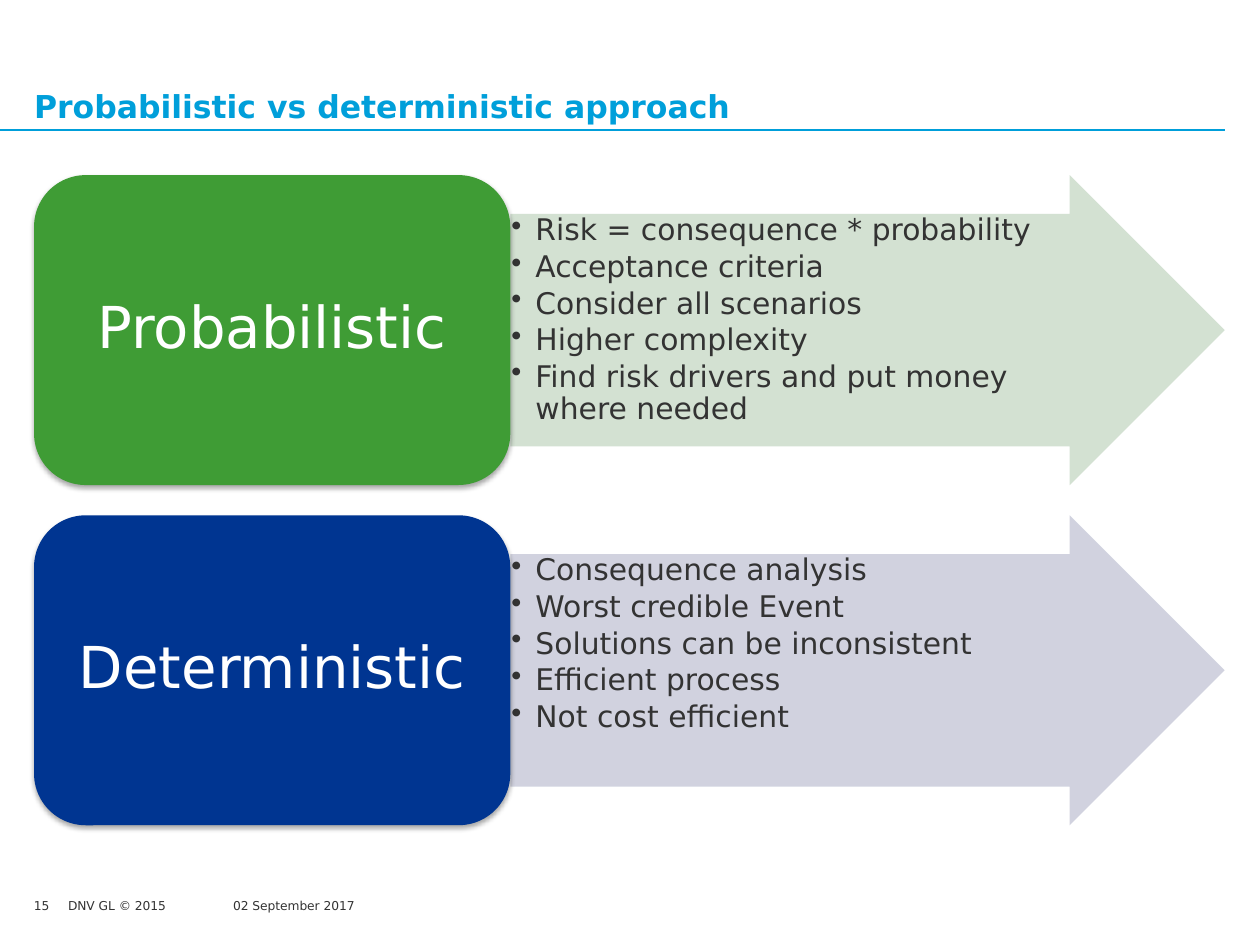
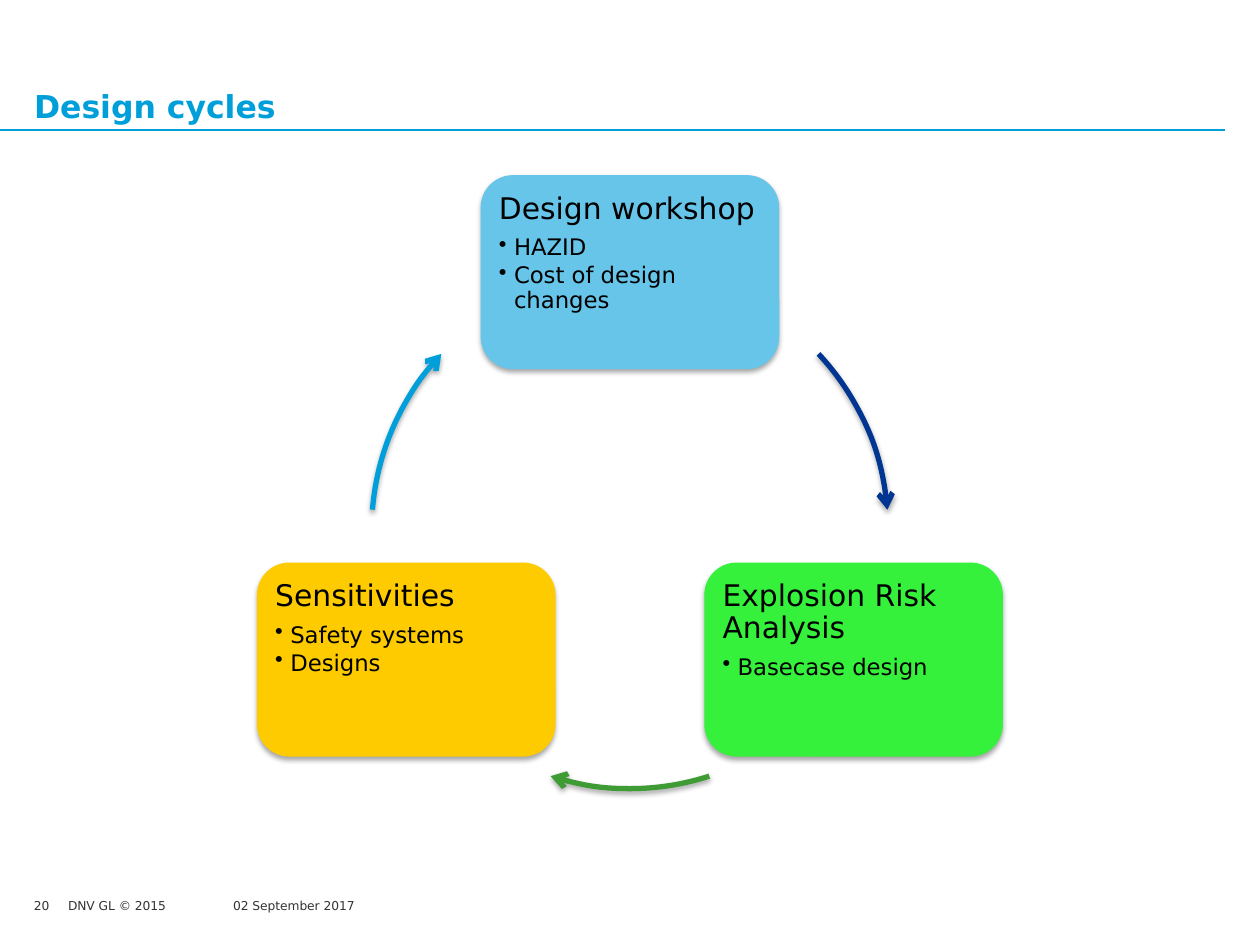
from dataclasses import dataclass
from math import cos, radians, sin

from lxml import etree
from pptx import Presentation
from pptx.dml.color import RGBColor
from pptx.enum.shapes import MSO_CONNECTOR, MSO_SHAPE
from pptx.enum.text import MSO_ANCHOR, MSO_AUTO_SIZE, PP_ALIGN
from pptx.oxml.ns import qn
from pptx.util import Inches, Pt

ROUNDED = MSO_SHAPE.ROUNDED_RECTANGLE
RIGHT_ARROW = MSO_SHAPE.RIGHT_ARROW
ARC = MSO_SHAPE.ARC
STRAIGHT = MSO_CONNECTOR.STRAIGHT
TOP, MIDDLE, BOTTOM = MSO_ANCHOR.TOP, MSO_ANCHOR.MIDDLE, MSO_ANCHOR.BOTTOM
LEFT, CENTER = PP_ALIGN.LEFT, PP_ALIGN.CENTER
NO_AUTOFIT = MSO_AUTO_SIZE.NONE
TITLE_ONLY = 5


@dataclass(frozen=True)
class Theme:
    font: str = "DejaVu Sans"
    accent: str = "009FDA"
    green: str = "3F9C35"
    navy: str = "003591"
    pale_green: str = "CFDECE"
    pale_navy: str = "CCCEDC"
    sky: str = "66C5E9"
    lime: str = "35F13C"
    yellow: str = "FECB00"
    dark: str = "333333"
    black: str = "000000"
    white: str = "FFFFFF"
    title_size: float = 18
    approach_size: float = 33
    body_size: float = 17
    detail_size: float = 13
    footer_size: float = 7


@dataclass(frozen=True)
class Box:
    left: float
    top: float
    width: float
    height: float

    def lengths(self) -> list:
        return [Inches(n) for n in (self.left, self.top, self.width, self.height)]


@dataclass(frozen=True)
class TextStyle:
    size: float
    color: str
    bold: bool = False
    align: int = LEFT
    line_spacing: float = 1.0
    space_after: float = 0  # share of the type size
    bullet_indent: float = 0  # inches; zero means no bullet


@dataclass(frozen=True)
class Approach:
    name: str
    color: str
    arrow_color: str
    points: tuple


@dataclass(frozen=True)
class Stage:
    name: str
    color: str
    angle: float  # degrees clockwise from the right
    points: tuple


@dataclass(frozen=True)
class CycleArrow:
    color: str
    start: float
    end: float


THEME = Theme()

# Text styles
TITLE = TextStyle(THEME.title_size, THEME.accent, bold=True)
FOOTER = TextStyle(THEME.footer_size, THEME.dark)
APPROACH_NAME = TextStyle(THEME.approach_size, THEME.white, align=CENTER, line_spacing=0.9)
APPROACH_POINT = TextStyle(THEME.body_size, THEME.dark, line_spacing=0.9,
                           space_after=0.15, bullet_indent=0.19)
STAGE_NAME = TextStyle(THEME.body_size, THEME.black, line_spacing=0.9, space_after=0.35)
STAGE_POINT = TextStyle(THEME.detail_size, THEME.black, line_spacing=0.9,
                        space_after=0.15, bullet_indent=0.12)

# Shared geometry
MARGIN = 0.27
RIGHT_EDGE = 9.72
CONTENT_TOP = 1.39
FOOTER_TOP = 7.13

# Content
APPROACHES = (
    Approach("Probabilistic", THEME.green, THEME.pale_green, (
        "Risk = consequence * probability",
        "Acceptance criteria",
        "Consider all scenarios",
        "Higher complexity",
        "Find risk drivers and put money where needed",
    )),
    Approach("Deterministic", THEME.navy, THEME.pale_navy, (
        "Consequence analysis",
        "Worst credible Event",
        "Solutions can be inconsistent",
        "Efficient process",
        "Not cost efficient",
    )),
)
STAGES = (
    Stage("Design workshop", THEME.sky, 270, ("HAZID", "Cost of design changes")),
    Stage("Explosion Risk Analysis", THEME.lime, 30, ("Basecase design",)),
    Stage("Sensitivities", THEME.yellow, 150, ("Safety systems", "Designs")),
)
CYCLE_ARROWS = (
    CycleArrow(THEME.navy, 316.9, 355.4),
    CycleArrow(THEME.green, 72.1, 107.9),
    CycleArrow(THEME.accent, 184.6, 223.1),
)


def rgb(color: str) -> RGBColor:
    return RGBColor.from_string(color)


def format_paragraph(paragraph, style: TextStyle) -> None:
    if style.bullet_indent:
        properties = paragraph._p.get_or_add_pPr()
        indent = Inches(style.bullet_indent)
        properties.set("marL", str(indent))
        properties.set("indent", str(-indent))
        etree.SubElement(properties, qn("a:buChar"), char="•")
    paragraph.alignment = style.align
    paragraph.line_spacing = style.line_spacing
    paragraph.space_before = Pt(0)
    paragraph.space_after = Pt(style.size * style.space_after)
    paragraph.font.name = THEME.font
    paragraph.font.size = Pt(style.size)
    paragraph.font.bold = style.bold
    paragraph.font.color.rgb = rgb(style.color)


def write_text(shape, lines: list, anchor=TOP, inset_x: float = 0,
               inset_y: float = 0, wrap: bool = True) -> None:
    """Fill a shape with (text, style) lines, one paragraph each."""
    frame = shape.text_frame
    frame.auto_size = NO_AUTOFIT
    frame.word_wrap = wrap
    frame.vertical_anchor = anchor
    frame.margin_left = frame.margin_right = Inches(inset_x)
    frame.margin_top = frame.margin_bottom = Inches(inset_y)
    for index, (text, style) in enumerate(lines):
        paragraph = frame.add_paragraph() if index else frame.paragraphs[0]
        paragraph.text = text
        format_paragraph(paragraph, style)


def add_soft_shadow(shape) -> None:
    effects = shape._element.spPr.find(qn("a:effectLst"))
    shadow = etree.SubElement(effects, qn("a:outerShdw"), blurRad=str(Pt(3.1)),
                              dist=str(Pt(1.8)), dir="5400000", rotWithShape="0")
    color = etree.SubElement(shadow, qn("a:srgbClr"), val=THEME.black)
    etree.SubElement(color, qn("a:alpha"), val="35000")


def add_filled_shape(slide, kind, box: Box, color: str):
    shape = slide.shapes.add_shape(kind, *box.lengths())
    shape.shadow.inherit = False
    shape.fill.solid()
    shape.fill.fore_color.rgb = rgb(color)
    shape.line.fill.background()
    return shape


def add_card(slide, box: Box, color: str):
    card = add_filled_shape(slide, ROUNDED, box, color)
    add_soft_shadow(card)
    return card


def add_base_slide(presentation, title: str, number: int):
    """Add a slide with its title, rule and footer."""
    slide = presentation.slides.add_slide(presentation.slide_layouts[TITLE_ONLY])
    heading = slide.shapes.title
    heading.left, heading.top, heading.width, heading.height = Box(
        MARGIN, 0.26, RIGHT_EDGE - MARGIN, 0.73).lengths()
    write_text(heading, [(title, TITLE)], anchor=BOTTOM)

    rule = slide.shapes.add_connector(
        STRAIGHT, Inches(0), Inches(1.03), Inches(RIGHT_EDGE), Inches(1.03))
    rule.line.color.rgb = rgb(THEME.accent)
    rule.line.width = Pt(1)
    etree.SubElement(rule._element.spPr, qn("a:effectLst"))

    footers = ((str(number), MARGIN, 0.26), ("DNV GL © 2015", 0.54, 0.8),
               ("02 September 2017", 1.85, 3.07))
    for text, left, width in footers:
        box = Box(left, FOOTER_TOP, width, 0.2)
        footer = slide.shapes.add_textbox(*box.lengths())
        write_text(footer, [(text, FOOTER)], wrap=False)
    return slide


def add_approach(slide, approach: Approach, top: float) -> None:
    card_width, height = 3.78, 2.46
    arrow_left = MARGIN + card_width
    arrow = add_filled_shape(
        slide, RIGHT_ARROW, Box(arrow_left, top, RIGHT_EDGE - arrow_left, height),
        approach.arrow_color)
    arrow.adjustments[0] = 0.75
    arrow.adjustments[1] = 0.5
    fill_color = arrow._element.spPr.find(qn("a:solidFill"))[0]
    etree.SubElement(fill_color, qn("a:alpha"), val="90000")
    write_text(arrow, [(point, APPROACH_POINT) for point in approach.points],
               inset_x=0.01, inset_y=0.01)

    card = add_card(slide, Box(MARGIN, top, card_width, height), approach.color)
    write_text(card, [(approach.name, APPROACH_NAME)], anchor=MIDDLE,
               inset_x=0.14, inset_y=0.07)


def add_cycle(slide) -> None:
    """Place the stages around a circle, with arc arrows between them."""
    center_x, center_y, radius = 5, 4.21, 2.05
    width, height = 2.37, 1.54
    for stage in STAGES:
        angle = radians(stage.angle)
        box = Box(center_x + radius * cos(angle) - width / 2,
                  center_y + radius * sin(angle) - height / 2, width, height)
        card = add_card(slide, box, stage.color)
        lines = [(stage.name, STAGE_NAME)]
        lines += [(point, STAGE_POINT) for point in stage.points]
        write_text(card, lines, inset_x=0.07, inset_y=0.07)

    circle = Box(center_x - radius, center_y - radius, 2 * radius, 2 * radius)
    for arrow in CYCLE_ARROWS:
        arc = slide.shapes.add_shape(ARC, *circle.lengths())
        # Arc angles are in 1/60000 degree, adjustments in 1/100000
        arc.adjustments[0] = arrow.start * 0.6
        arc.adjustments[1] = arrow.end * 0.6
        arc.shadow.inherit = False
        add_soft_shadow(arc)
        arc.fill.background()
        arc.line.color.rgb = rgb(arrow.color)
        arc.line.width = Pt(3)
        etree.SubElement(arc.line._get_or_add_ln(), qn("a:tailEnd"), type="arrow")


def main() -> None:
    presentation = Presentation()
    presentation.slide_width = Inches(10)
    presentation.slide_height = Inches(7.5)

    # Comparison of the two approaches
    slide = add_base_slide(presentation, "Probabilistic vs deterministic approach", 15)
    for row, approach in enumerate(APPROACHES):
        add_approach(slide, approach, CONTENT_TOP + row * 2.7)

    # Design cycle
    slide = add_base_slide(presentation, "Design cycles", 20)
    add_cycle(slide)

    presentation.save("out.pptx")


if __name__ == "__main__":
    main()
